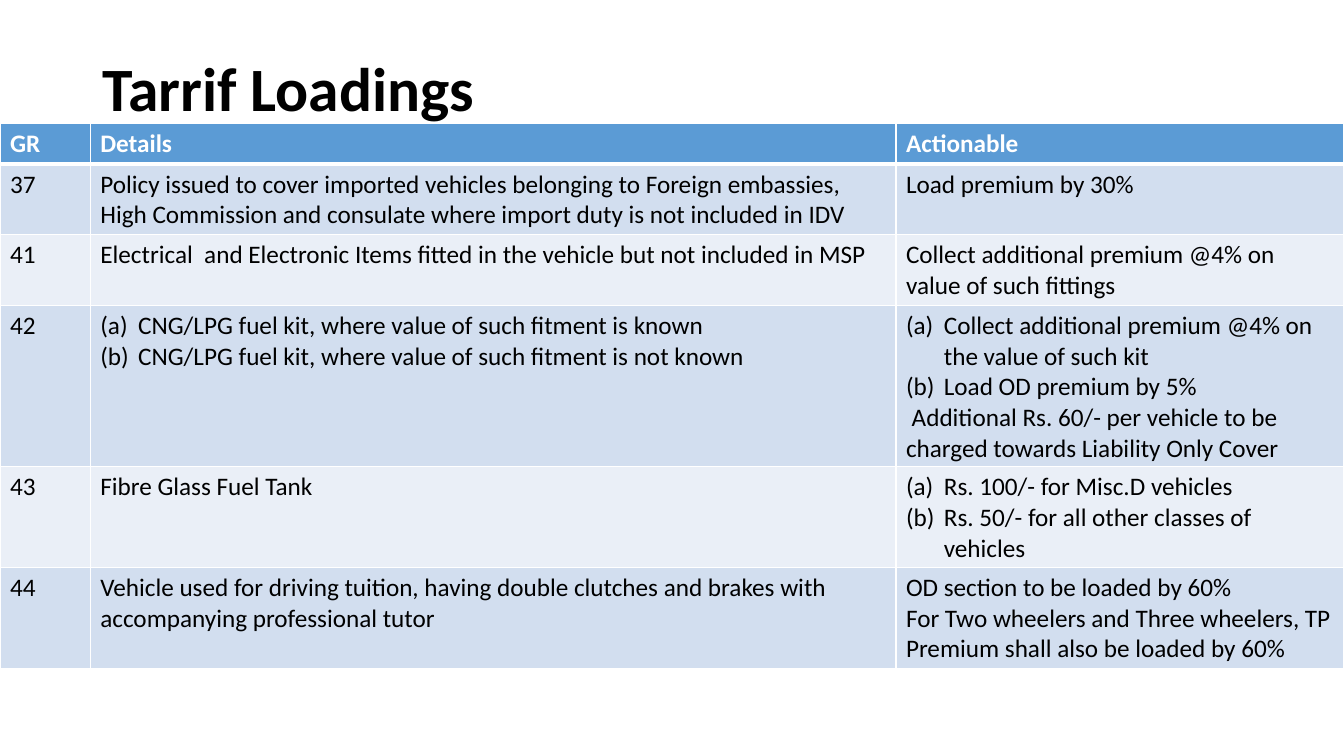
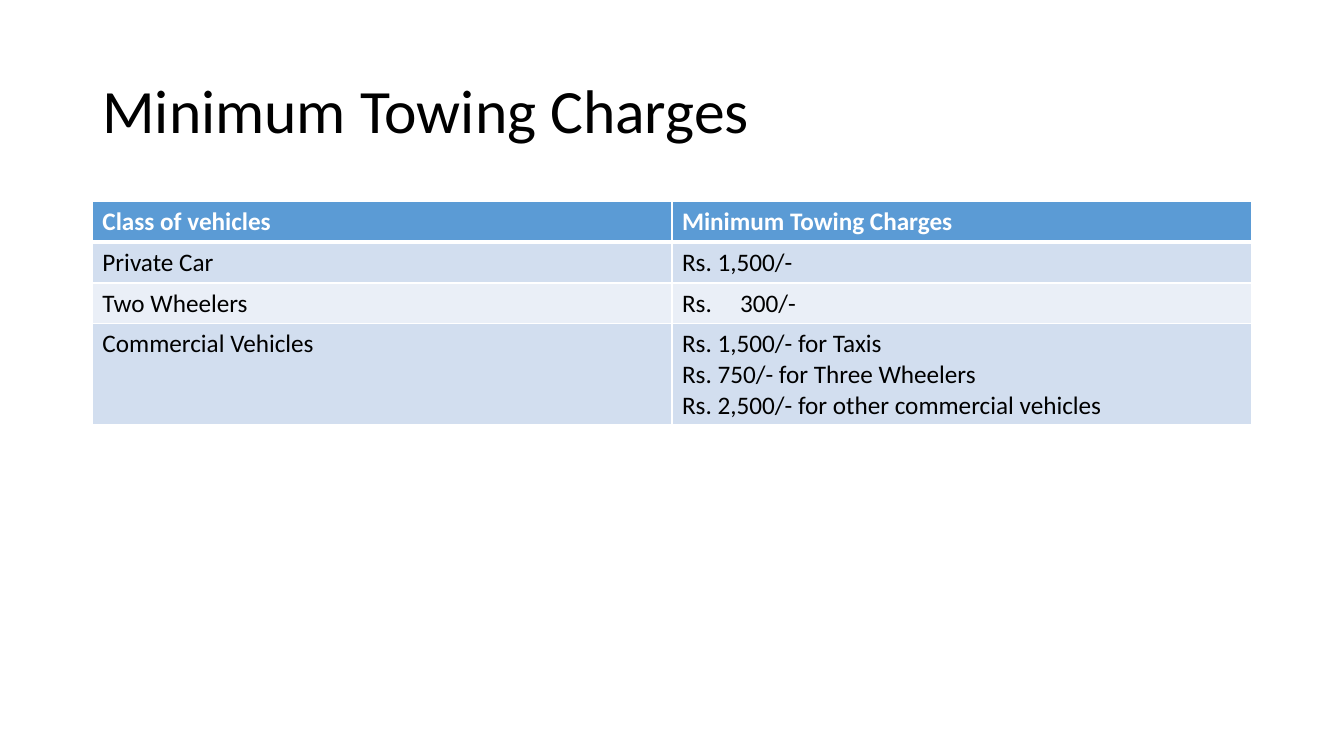
"""Build two slides of motor tariff tables: loadings and towing charges."""
from collections import namedtuple

from pptx import Presentation
from pptx.dml.color import RGBColor
from pptx.enum.text import MSO_ANCHOR
from pptx.oxml.ns import qn
from pptx.util import Pt
from lxml.etree import SubElement

WHITE = RGBColor(0xFF, 0xFF, 0xFF)
BLACK = RGBColor(0, 0, 0)
HEADER_BLUE = RGBColor(0x5B, 0x9B, 0xD5)
BANDS = (RGBColor(0xD2, 0xDE, 0xEF), RGBColor(0xEA, 0xEF, 0xF7))

FONT = "Calibri"
TITLE_FONT = {"name": FONT, "size": Pt(44)}
HEADER_FONT = {"name": FONT, "size": Pt(18), "bold": True}
BODY_FONT = {"name": FONT, "size": Pt(18), "bold": False}
MARGIN, TITLE_TOP, TITLE_WIDTH = 66, 28.75, 828
ROW_HEIGHT, LETTER_INDENT, AMOUNT_TAB = 29.2, 27, 41.5
THIN, THICK = 1, 3

Lettered = namedtuple("Lettered", "text")

SLIDES = [
    {
        "title": "Tarrif Loadings",
        "title_bold": True,
        "title_height": 72.7,
        "table_at": (0, 88),
        "columns": (64.5, 575.5, 320),
        "rows": [
            ["GR", "Details", "Actionable"],
            ["37",
             "Policy issued to cover imported vehicles belonging to Foreign embassies, "
             "High Commission and consulate where import duty is not included in IDV",
             "Load premium by 30%"],
            ["41",
             "Electrical  and Electronic Items fitted in the vehicle but not included in MSP",
             "Collect additional premium @4% on value of such fittings"],
            ["42",
             [Lettered("CNG/LPG fuel kit, where value of such fitment is known"),
              Lettered("CNG/LPG fuel kit, where value of such fitment is not known")],
             [Lettered("Collect additional premium @4% on the value of such kit"),
              Lettered("Load OD premium by 5%"),
              " Additional Rs. 60/- per vehicle to be charged towards Liability Only Cover"]],
            ["43",
             "Fibre Glass Fuel Tank",
             [Lettered("Rs. 100/- for Misc.D vehicles"),
              Lettered("Rs. 50/- for all other classes of vehicles")]],
            ["44",
             "Vehicle used for driving tuition, having double clutches and brakes with "
             "accompanying professional tutor",
             ["OD section to be loaded by 60%",
              "For Two wheelers and Three wheelers, TP Premium shall also be loaded by 60%"]],
        ],
    },
    {
        "title": "Minimum Towing Charges",
        "title_bold": False,
        "title_height": 104.4,
        "table_at": (MARGIN, 143.75),
        "columns": (414, 414),
        "rows": [
            ["Class of vehicles", "Minimum Towing Charges"],
            ["Private Car", "Rs. 1,500/-"],
            ["Two Wheelers", "Rs.\t300/-"],
            ["Commercial Vehicles",
             ["Rs. 1,500/- for Taxis",
              "Rs. 750/- for Three Wheelers",
              "Rs. 2,500/- for other commercial vehicles"]],
        ],
    },
]


def write(para, text, formats, color):
    span = para.add_run()
    span.text = text
    for name, value in formats.items():
        setattr(span.font, name, value)
    span.font.color.rgb = color


def add_title(page, content):
    box = page.shapes.add_textbox(
        Pt(MARGIN), Pt(TITLE_TOP), Pt(TITLE_WIDTH), Pt(content["title_height"]))
    frame = box.text_frame
    frame.word_wrap = True
    frame.vertical_anchor = MSO_ANCHOR.MIDDLE
    para = frame.paragraphs[0]
    para.line_spacing = 0.9
    write(para, content["title"], TITLE_FONT | {"bold": content["title_bold"]}, BLACK)


def add_letter(para):
    properties = para._p.get_or_add_pPr()
    properties.set("marL", str(Pt(LETTER_INDENT)))
    properties.set("indent", str(-Pt(LETTER_INDENT)))
    SubElement(properties, qn("a:buFont"), typeface="+mj-lt")
    SubElement(properties, qn("a:buAutoNum"), type="alphaLcParenBoth")


def add_tab_stop(para):
    stops = SubElement(para._p.get_or_add_pPr(), qn("a:tabLst"))
    SubElement(stops, qn("a:tab"), pos=str(Pt(AMOUNT_TAB)), algn="l")


def set_borders(cell, top, bottom):
    properties = cell._tc.get_or_add_tcPr()
    for side, width in (("L", THIN), ("R", THIN), ("T", top), ("B", bottom)):
        line = SubElement(properties, qn(f"a:ln{side}"), w=str(Pt(width)))
        fill = SubElement(line, qn("a:solidFill"))
        SubElement(fill, qn("a:srgbClr"), val=str(WHITE))


def fill_cell(cell, content, row):
    is_header = row == 0
    set_borders(cell, THICK if row == 1 else THIN, THICK if is_header else THIN)
    cell.fill.solid()
    cell.fill.fore_color.rgb = HEADER_BLUE if is_header else BANDS[(row - 1) % 2]
    frame = cell.text_frame
    items = content if type(content) is list else [content]
    for index, item in enumerate(items):
        para = frame.add_paragraph() if index else frame.paragraphs[0]
        text = item
        if isinstance(item, Lettered):
            text = item.text
            add_letter(para)
        if "\t" in text:
            add_tab_stop(para)
        write(para, text, HEADER_FONT if is_header else BODY_FONT,
              WHITE if is_header else BLACK)


def add_grid(page, content):
    rows, columns = content["rows"], content["columns"]
    left, top = content["table_at"]
    table = page.shapes.add_table(
        len(rows), len(columns), Pt(left), Pt(top),
        Pt(sum(columns)), Pt(ROW_HEIGHT * len(rows))).table
    for column, width in zip(table.columns, columns):
        column.width = Pt(width)
    for row, values in enumerate(rows):
        table.rows[row].height = Pt(ROW_HEIGHT)
        for column, value in enumerate(values):
            fill_cell(table.cell(row, column), value, row)


def main():
    deck = Presentation()
    deck.slide_width, deck.slide_height = Pt(960), Pt(540)
    for content in SLIDES:
        page = deck.slides.add_slide(deck.slide_layouts[6])
        add_title(page, content)
        add_grid(page, content)
    deck.save("out.pptx")


if __name__ == "__main__":
    main()
